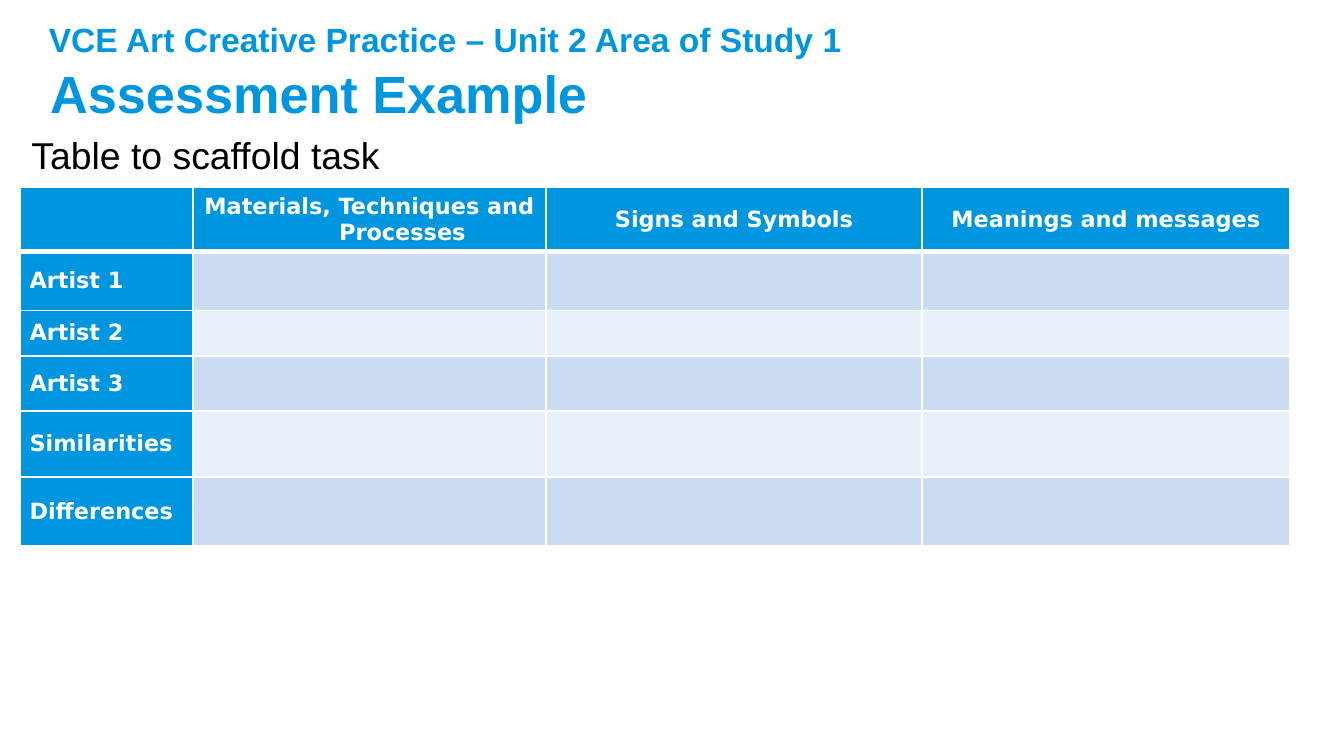
from lxml.etree import SubElement
from pptx import Presentation
from pptx.dml.color import RGBColor
from pptx.enum.text import MSO_ANCHOR, MSO_AUTO_SIZE, PP_ALIGN
from pptx.oxml.ns import qn
from pptx.util import Pt

PX = 4572  # 200 px to the inch
BLUE = RGBColor(0x00, 0x96, 0xDF)
BAND_DARK = RGBColor(0xCC, 0xDD, 0xF3)
BAND_LIGHT = RGBColor(0xE7, 0xEF, 0xF9)
WHITE = RGBColor(0xFF, 0xFF, 0xFF)
BLACK = RGBColor(0x00, 0x00, 0x00)

HEADERS = ["", "Materials, Techniques and Processes", "Signs and Symbols",
           "Meanings and messages"]
ROW_LABELS = ["Artist 1", "Artist 2", "Artist 3", "Similarities", "Differences"]
COL_WIDTHS = [257, 526, 559, 548]
ROW_HEIGHTS = [96, 87, 68, 82, 98, 103]
HANGING = 98 * PX


def write(p, text, size, name, color, bold):
    r = p.add_run()
    r.text = text
    r.font.color.rgb = color
    for key, value in {"size": Pt(size), "name": name, "bold": bold}.items():
        setattr(r.font, key, value)


def add_borders(cell, bottom):
    """Draw white cell borders, 1 pt wide except for the bottom one."""
    tcPr = cell._tc.get_or_add_tcPr()
    widths = {"a:lnL": 1, "a:lnR": 1, "a:lnT": 1, "a:lnB": bottom}
    for i, (tag, width) in enumerate(widths.items()):
        ln = SubElement(tcPr, qn(tag), w=str(Pt(width)))
        fill = SubElement(ln, qn("a:solidFill"))
        SubElement(fill, qn("a:srgbClr"), val=str(WHITE))
        tcPr.insert(i, ln)


prs = Presentation()
prs.slide_width, prs.slide_height = 2000 * PX, 1125 * PX
s = prs.slides.add_slide(prs.slide_layouts[6])

# Table
frame = s.shapes.add_table(len(ROW_HEIGHTS), len(COL_WIDTHS), 30 * PX, 279 * PX,
                           sum(COL_WIDTHS) * PX, sum(ROW_HEIGHTS) * PX)
table = frame.table
table.first_col = True
for column, width in zip(table.columns, COL_WIDTHS):
    column.width = width * PX
for row, height in zip(table.rows, ROW_HEIGHTS):
    row.height = height * PX

rows = [HEADERS] + [[label, "", "", ""] for label in ROW_LABELS]
for i, texts in enumerate(rows):
    for j, text in enumerate(texts):
        cell = table.cell(i, j)
        is_heading = i == 0 or j == 0
        band = BAND_DARK if i % 2 else BAND_LIGHT
        cell.fill.solid()
        cell.fill.fore_color.rgb = BLUE if is_heading else band
        add_borders(cell, 3 if i == 0 else 1)
        cell_format = {"margin_left": 14 * PX, "margin_right": 14 * PX,
                       "margin_top": 0, "margin_bottom": 0,
                       "vertical_anchor": MSO_ANCHOR.MIDDLE}
        for key, value in cell_format.items():
            setattr(cell, key, value)
        if text:
            p = cell.text_frame.paragraphs[0]
            p.alignment = PP_ALIGN.CENTER if i == 0 else PP_ALIGN.LEFT
            if i > 0:
                p.space_after = Pt(6)
            pPr = p._p.get_or_add_pPr()
            pPr.set("marL", str(HANGING))
            pPr.set("indent", str(-HANGING))
            write(p, text, 12, "DejaVu Sans", WHITE, True)

# Headings: text, box in px, size, colour, bold, anchor, wrap, autofit
TOP, MIDDLE = MSO_ANCHOR.TOP, MSO_ANCHOR.MIDDLE
FIXED, GROW = MSO_AUTO_SIZE.NONE, MSO_AUTO_SIZE.SHAPE_TO_FIT_TEXT
headings = [
    ("Assessment Example", (55, 51, 1890, 174), 28, BLUE, True, MIDDLE, True, FIXED),
    ("Table to scaffold task", (27, 187, 562, 88), 20, BLACK, False, TOP, False, GROW),
    ("VCE Art Creative Practice – Unit 2 Area of Study 1", (53, 18, 1518, 80),
     18, BLUE, True, TOP, True, GROW),
]
for text, box, size, color, bold, anchor, wrap, autofit in headings:
    tf = s.shapes.add_textbox(*(v * PX for v in box)).text_frame
    frame_format = {"word_wrap": wrap, "auto_size": autofit,
                    "vertical_anchor": anchor}
    for key, value in frame_format.items():
        setattr(tf, key, value)
    write(tf.paragraphs[0], text, size, "Arial", color, bold)

prs.save("out.pptx")
